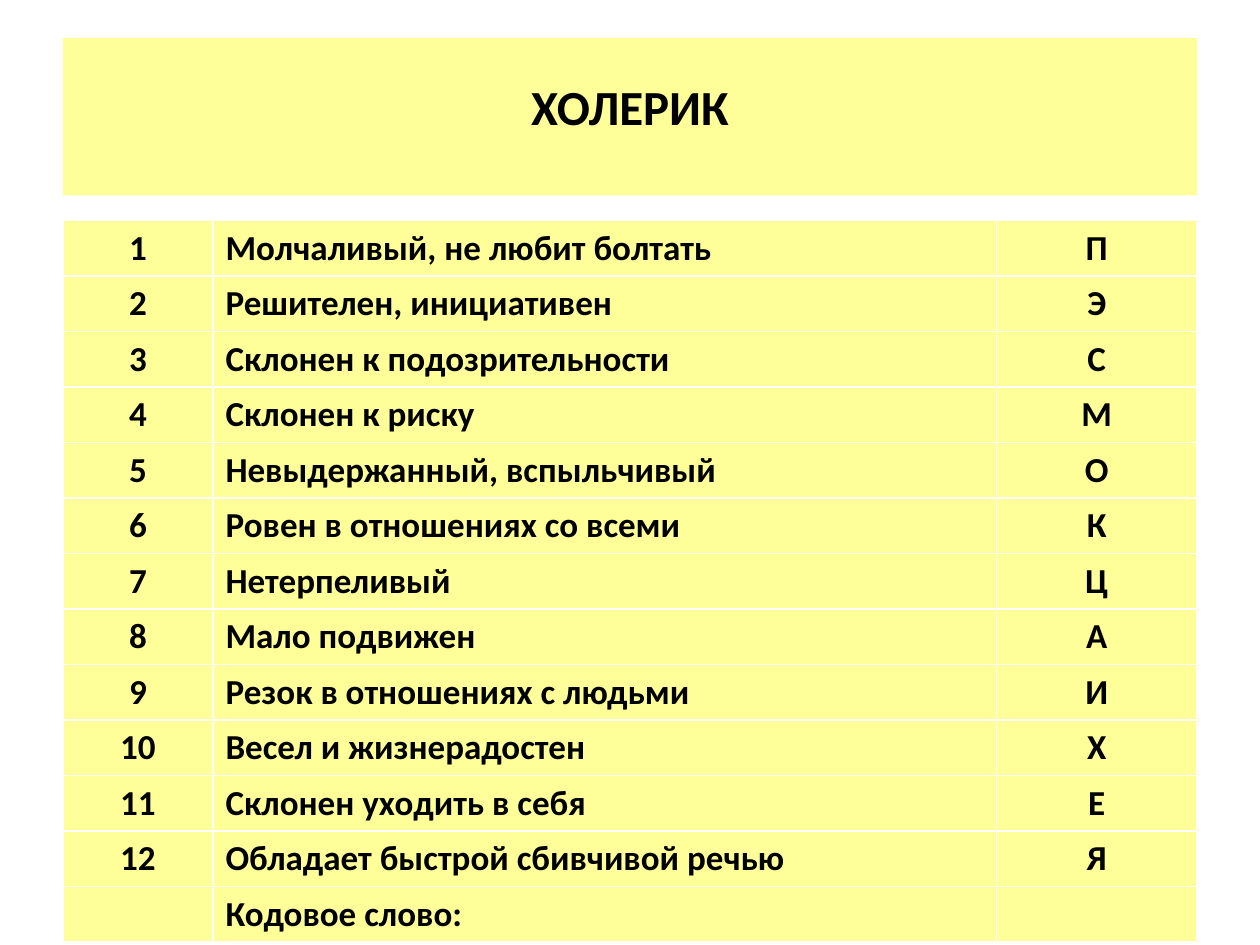
from pptx import Presentation
from pptx.dml.color import RGBColor
from pptx.enum.text import MSO_ANCHOR, PP_ALIGN
from pptx.util import Inches, Pt

YELLOW = RGBColor(0xFF, 0xFF, 0x99)
BLACK = RGBColor(0x00, 0x00, 0x00)
CENTER = PP_ALIGN.CENTER
JUSTIFY = PP_ALIGN.JUSTIFY
MIDDLE = MSO_ANCHOR.MIDDLE
TITLE_ONLY_LAYOUT = 5

TRAITS = [
    ("Молчаливый, не любит болтать", "П"),
    ("Решителен, инициативен", "Э"),
    ("Склонен к подозрительности", "С"),
    ("Склонен к риску", "М"),
    ("Невыдержанный, вспыльчивый", "О"),
    ("Ровен в отношениях со всеми", "К"),
    ("Нетерпеливый", "Ц"),
    ("Мало подвижен", "А"),
    ("Резок в отношениях с людьми", "И"),
    ("Весел и жизнерадостен", "Х"),
    ("Склонен уходить в себя", "Е"),
    ("Обладает быстрой сбивчивой речью", "Я"),
]
COLUMN_WIDTHS = (1.19, 6.22, 1.59)
COLUMN_ALIGNMENTS = (CENTER, JUSTIFY, CENTER)
ROW_HEIGHT = 0.44


class SlideBuilder:
    font_name = "Calibri"
    left = Inches(0.5)
    width = Inches(9)

    def __init__(self, presentation):
        layout = presentation.slide_layouts[TITLE_ONLY_LAYOUT]
        self.slide = presentation.slides.add_slide(layout)

    def style_paragraph(self, paragraph, size, alignment):
        paragraph.alignment = alignment
        font = paragraph.font
        font.name = self.font_name
        font.size = Pt(size)
        font.bold = True
        font.color.rgb = BLACK

    def fill(self, target):
        target.fill.solid()
        target.fill.fore_color.rgb = YELLOW

    def title(self, text, top, height):
        title = self.slide.shapes.title
        title.left, title.top = self.left, Inches(top)
        title.width, title.height = self.width, Inches(height)
        self.fill(title)
        frame = title.text_frame
        frame.text = text
        frame.vertical_anchor = MIDDLE
        frame.margin_bottom = Inches(0.22)
        self.style_paragraph(frame.paragraphs[0], 28, CENTER)

    def table(self, rows, top):
        """Fill a table whose white grid lines come from the default table style."""
        table = self.slide.shapes.add_table(
            len(rows), len(COLUMN_WIDTHS), self.left, Inches(top),
            self.width, Inches(ROW_HEIGHT * len(rows))).table
        table.horz_banding = False
        for column, width in zip(table.columns, COLUMN_WIDTHS):
            column.width = Inches(width)
        for row, texts in zip(table.rows, rows):
            row.height = Inches(ROW_HEIGHT)
            for cell, text, alignment in zip(row.cells, texts, COLUMN_ALIGNMENTS):
                self.fill(cell)
                cell.text = text
                self.style_paragraph(cell.text_frame.paragraphs[0], 20, alignment)


def main():
    presentation = Presentation()
    presentation.slide_width = Inches(10)
    presentation.slide_height = Inches(7.5)
    builder = SlideBuilder(presentation)
    builder.title("ХОЛЕРИК", top=0.3, height=1.25)
    rows = [(str(number), trait, letter)
            for number, (trait, letter) in enumerate(TRAITS, start=1)]
    rows.append(("", "Кодовое слово:", ""))
    builder.table(rows, top=1.75)
    presentation.save("out.pptx")


if __name__ == "__main__":
    main()
